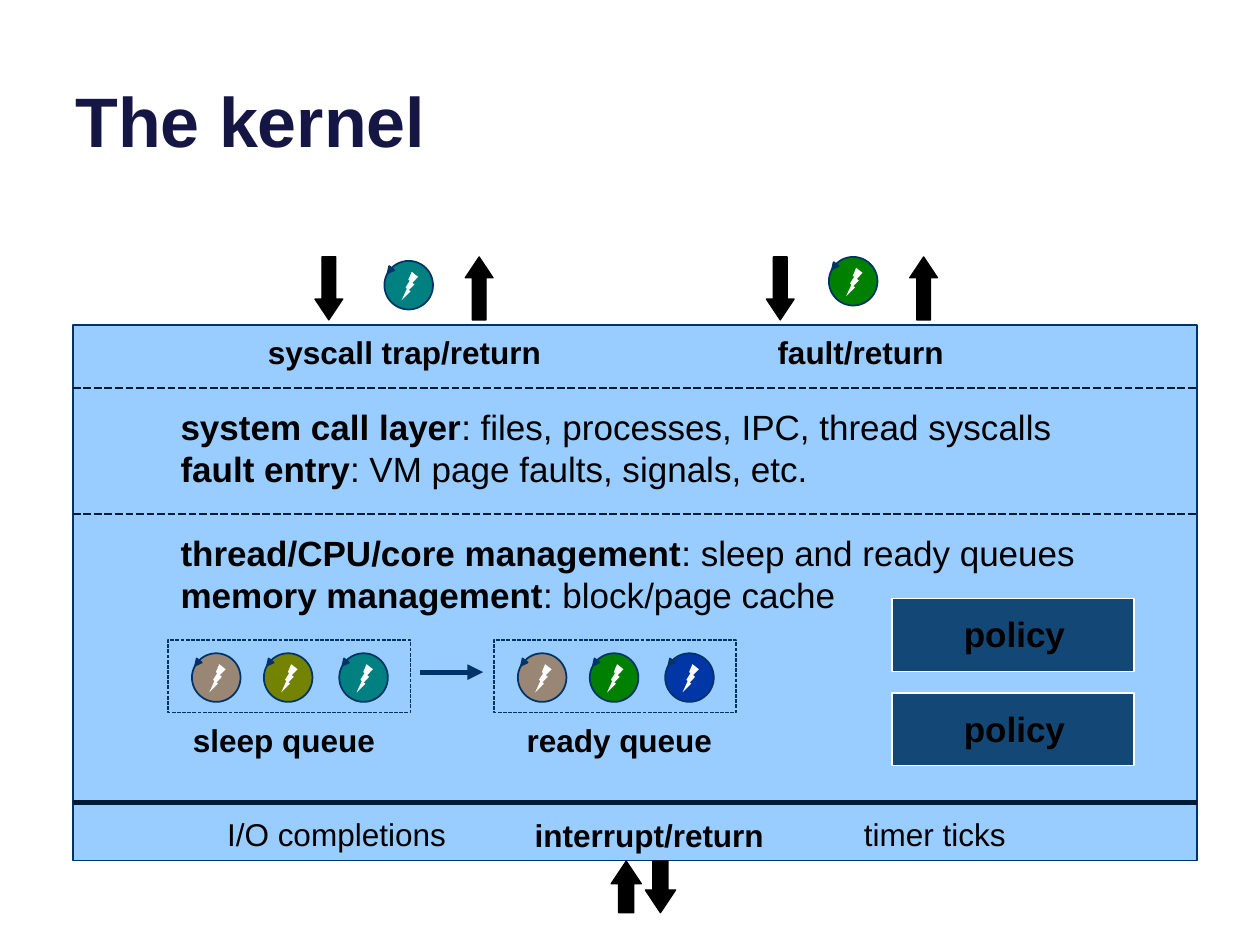
from dataclasses import dataclass

from lxml import etree
from pptx import Presentation
from pptx import util as u
from pptx.dml.color import RGBColor
from pptx.enum import dml, shapes, text
from pptx.oxml import ns

Cm = u.Cm
SHAPE = shapes.MSO_SHAPE
CENTER = text.PP_ALIGN.CENTER
DASH = dml.MSO_LINE.SQUARE_DOT


@dataclass(frozen=True)
class Theme:
    font: str = "Arial"
    title_size: int = 40
    body_size: int = 20
    label_size: int = 18
    title: str = "161645"
    ink: str = "000000"
    white: str = "FFFFFF"
    kernel: str = "99CCFF"
    outline: str = "003367"
    divider: str = "001934"
    policy: str = "134776"
    teal: str = "008080"
    green: str = "008000"
    taupe: str = "998674"
    olive: str = "738300"
    blue: str = "0036A6"


THEME = Theme()
KERNEL_LEFT, KERNEL_TOP, KERNEL_WIDTH, KERNEL_HEIGHT = 1.47, 6.55, 22.66, 10.8
QUEUE_TOP = 12.9
QUEUE_WIDTH, QUEUE_HEIGHT = 4.88, 1.47


def style_line(line, color, width, dash=None):
    line.color.rgb = RGBColor.from_string(color)
    line.width = u.Pt(width)
    if dash:
        line.dash_style = dash


def add_block(parent, kind, left, top, width, height, fill=None, line=None, weight=1, dash=None):
    shape = parent.shapes.add_shape(kind, Cm(left), Cm(top), Cm(width), Cm(height))
    shape.shadow.inherit = False
    if fill:
        shape.fill.solid()
        shape.fill.fore_color.rgb = RGBColor.from_string(fill)
    else:
        shape.fill.background()
    if line:
        style_line(shape.line, line, weight, dash)
    else:
        shape.line.fill.background()
    return shape


def flip(shape, direction):
    shape.element.spPr.xfrm.set(direction, "1")


def add_text(slide, left, top, width, height, paragraphs, size, color=THEME.ink,
             align=None, anchor=text.MSO_ANCHOR.TOP, wrap=True):
    box = slide.shapes.add_textbox(Cm(left), Cm(top), Cm(width), Cm(height))
    frame = box.text_frame
    frame.word_wrap = wrap
    frame.vertical_anchor = anchor
    for index, runs in enumerate(paragraphs):
        paragraph = frame.add_paragraph() if index else frame.paragraphs[0]
        paragraph.alignment = align
        for words, bold in runs:
            run = paragraph.add_run()
            run.text = words
            run.font.name = THEME.font
            run.font.size = u.Pt(size)
            run.font.bold = bold
            run.font.color.rgb = RGBColor.from_string(color)


def add_label(slide, left, top, width, words, bold=True):
    add_text(slide, left, top, width, 1.03, [[(words, bold)]], THEME.label_size, align=CENTER)


def add_layer_text(slide, top, entries):
    paragraphs = [[(name, True), (details, False)] for name, details in entries]
    add_text(slide, 3.39, top, 19.47, 1.98, paragraphs, THEME.body_size)


def add_line(slide, start, end, color, width, dash=None, arrow=False):
    line = slide.shapes.add_connector(
        shapes.MSO_CONNECTOR.STRAIGHT, *(Cm(value) for value in start + end))
    style_line(line.line, color, width, dash)
    properties = line.element.spPr
    if arrow:
        etree.SubElement(line.line._get_or_add_ln(), ns.qn("a:tailEnd"), type="triangle")
    etree.SubElement(properties, ns.qn("a:effectLst"))


def add_divider(slide, top, width, dash=None):
    add_line(slide, (KERNEL_LEFT, top), (KERNEL_LEFT + KERNEL_WIDTH, top),
             THEME.divider, width, dash)


def add_arrow(slide, left, top, width, height, down):
    arrow = add_block(slide, SHAPE.UP_ARROW, left, top, width, height, THEME.ink, THEME.ink, 0.75)
    arrow.adjustments[0] = 0.5
    arrow.adjustments[1] = 0.75
    if down:
        flip(arrow, "flipV")


def add_thread(slide, left, top, color):
    group = slide.shapes.add_group_shape()
    add_block(group, SHAPE.OVAL, left, top, 0.98, 0.98, color, THEME.outline)
    bolt = add_block(group, SHAPE.LIGHTNING_BOLT, left + 0.35, top + 0.22, 0.33, 0.57, THEME.white)
    flip(bolt, "flipH")
    head = add_block(group, SHAPE.ISOSCELES_TRIANGLE, left + 0.04, top + 0.13, 0.13, 0.13,
                     THEME.outline, THEME.outline)
    head.rotation = 219


def add_queue(slide, left, label_left, name, colors):
    for offset, color in zip((0.48, 1.93, 3.45), colors):
        add_thread(slide, left + offset, QUEUE_TOP + 0.27, color)
    add_block(slide, SHAPE.RECTANGLE, left, QUEUE_TOP, QUEUE_WIDTH, QUEUE_HEIGHT,
              line=THEME.outline, weight=0.75, dash=DASH)
    add_text(slide, label_left, 14.4, 5.51, 1.02, [[(name, True)]], THEME.label_size,
             align=CENTER, anchor=text.MSO_ANCHOR.MIDDLE)


def add_policy(slide, top):
    add_block(slide, SHAPE.RECTANGLE, 17.98, top, QUEUE_WIDTH, QUEUE_HEIGHT,
              THEME.policy, THEME.white, 0.75)
    add_text(slide, 19.18, top + 0.16, 2.62, 1.12, [[("policy", True)]],
             THEME.body_size, wrap=False)


def main():
    presentation = Presentation()
    presentation.slide_width, presentation.slide_height = Cm(25.4), Cm(19.05)
    slide = presentation.slides.add_slide(presentation.slide_layouts[6])

    add_text(slide, 1.27, -0.94, 22.86, 4.32, [[("The kernel", True)]], THEME.title_size,
             THEME.title, anchor=text.MSO_ANCHOR.BOTTOM)

    add_block(slide, SHAPE.FLOWCHART_PROCESS, KERNEL_LEFT, KERNEL_TOP,
              KERNEL_WIDTH, KERNEL_HEIGHT, THEME.kernel, THEME.outline)
    add_divider(slide, 16.18, 3)
    for top in (7.82, 10.36):
        add_divider(slide, top, 1.5, DASH)

    for left, down in ((6.35, True), (9.38, False), (15.45, True), (18.34, False)):
        add_arrow(slide, left, 5.18, 0.56, 1.27, down)
    for left, down in ((12.32, False), (13.01, True)):
        add_arrow(slide, left, 17.36, 0.61, 1.04, down)
    add_thread(slide, 7.75, 5.26, THEME.teal)
    add_thread(slide, 16.71, 5.18, THEME.green)

    add_label(slide, 4.88, 6.58, 6.55, "syscall trap/return")
    add_label(slide, 14.81, 6.58, 5.08, "fault/return")
    add_label(slide, 10.31, 16.33, 5.56, "interrupt/return")
    add_label(slide, 2.34, 16.31, 8.89, "I/O completions", bold=False)
    add_label(slide, 14.4, 16.31, 8.89, "timer ticks", bold=False)

    add_layer_text(slide, 8.05, [
        ("system call layer", ": files, processes, IPC, thread syscalls"),
        ("fault entry", ": VM page faults, signals, etc."),
    ])
    add_layer_text(slide, 10.59, [
        ("thread/CPU/core management", ": sleep and ready queues"),
        ("memory management", ": block/page cache"),
    ])

    add_queue(slide, 3.39, 2.97, "sleep queue", (THEME.taupe, THEME.olive, THEME.teal))
    add_queue(slide, 9.96, 9.73, "ready queue", (THEME.taupe, THEME.green, THEME.blue))
    add_line(slide, (8.47, 13.55), (9.74, 13.55), THEME.outline, 3, arrow=True)
    for top in (12.07, 13.97):
        add_policy(slide, top)

    presentation.save("out.pptx")


if __name__ == "__main__":
    main()
